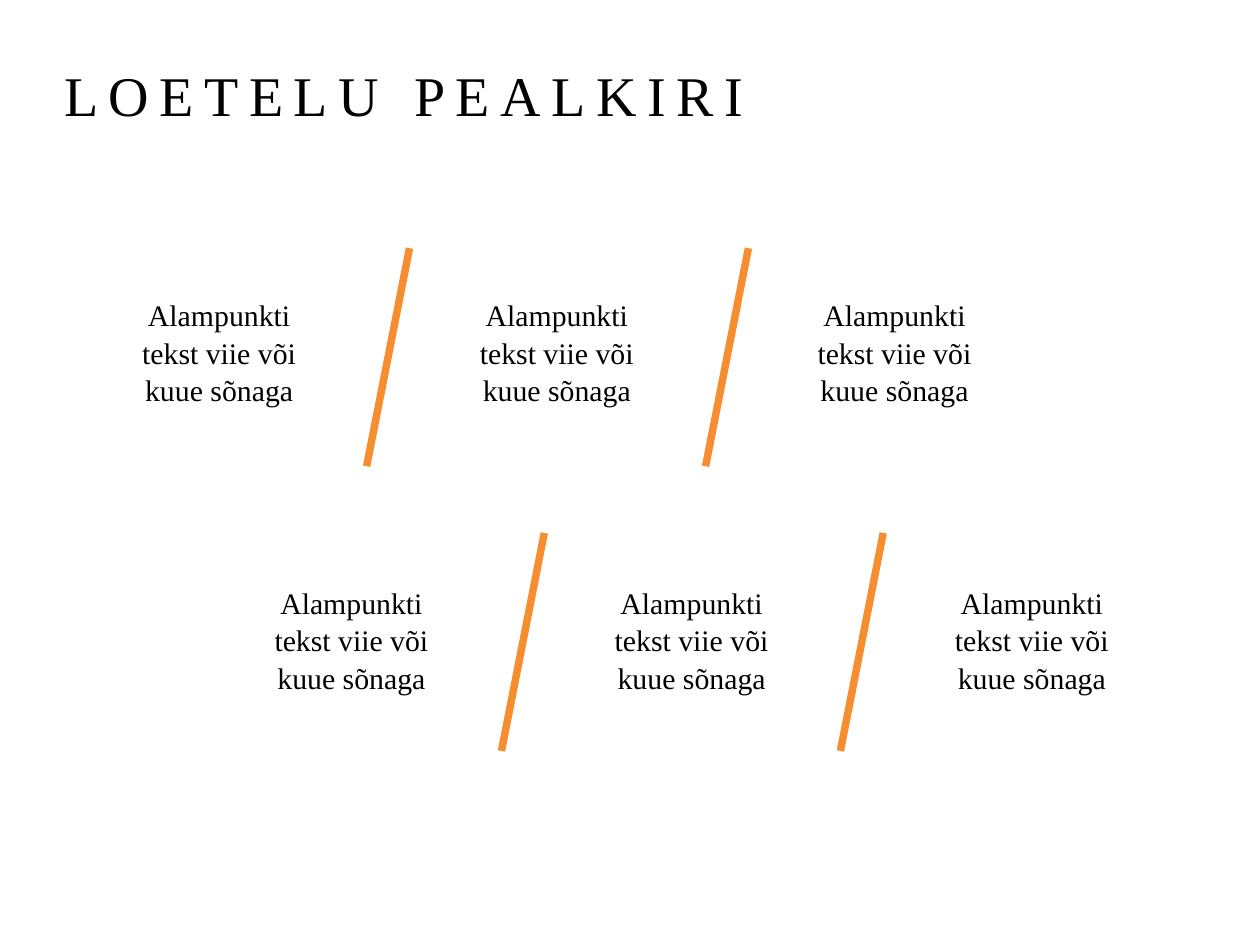
"""Build a title slide with two staggered rows of points parted by slanted lines."""
from dataclasses import dataclass

from lxml import etree
from pptx import Presentation
from pptx.dml.color import RGBColor
from pptx.enum.shapes import MSO_CONNECTOR
from pptx.enum.text import MSO_ANCHOR, MSO_AUTO_SIZE, PP_ALIGN
from pptx.oxml.ns import qn
from pptx.slide import Slide
from pptx.util import Inches, Pt

STRAIGHT = MSO_CONNECTOR.STRAIGHT
MIDDLE, BOTTOM = MSO_ANCHOR.MIDDLE, MSO_ANCHOR.BOTTOM
LEFT, CENTER = PP_ALIGN.LEFT, PP_ALIGN.CENTER
GROW = MSO_AUTO_SIZE.SHAPE_TO_FIT_TEXT
NO_FIT = MSO_AUTO_SIZE.NONE

BLACK = RGBColor(0x00, 0x00, 0x00)
ORANGE = RGBColor(0xF6, 0x8D, 0x2E)
FONT = "Times New Roman"

POINT = ("Alampunkti", "tekst viie või", "kuue sõnaga")
COLUMNS = 3
POINT_W, POINT_H = 1.64, 0.96
SLASH_W, SLASH_H, SLASH_PITCH = 0.34, 1.73, 2.69


@dataclass(frozen=True)
class Row:
    """A row of points, with the slashes between its columns."""
    left: float
    top: float
    pitch: float
    slash_left: float
    slash_top: float


ROWS = (
    Row(left=0.92, top=2.31, pitch=2.68, slash_left=2.91, slash_top=1.97),
    Row(left=1.97, top=4.59, pitch=2.7, slash_left=3.98, slash_top=4.23),
)


def add_text(s: Slide, lines: tuple[str, ...], x: float, y: float, w: float, h: float, *,
             size: float, align: PP_ALIGN = LEFT, anchor: MSO_ANCHOR = MIDDLE,
             fit: MSO_AUTO_SIZE = NO_FIT, line_spacing: float = 1.0,
             tracking: float = 0) -> None:
    """Add a text box with one paragraph for each line."""
    tf = s.shapes.add_textbox(Inches(x), Inches(y), Inches(w), Inches(h)).text_frame
    tf.word_wrap = True
    tf.auto_size = fit
    tf.vertical_anchor = anchor
    for i, line in enumerate(lines):
        p = tf.add_paragraph() if i else tf.paragraphs[0]
        p.alignment = align
        p.line_spacing = line_spacing
        r = p.add_run()
        r.text = line
        r.font.name = FONT
        r.font.size = Pt(size)
        r.font.color.rgb = BLACK
        if tracking:
            r.font._element.set("spc", str(round(tracking * 100)))


def add_slash(s: Slide, x: float, y: float) -> None:
    """Add a slanted line that falls from upper right to lower left."""
    sp = s.shapes.add_connector(STRAIGHT, Inches(x + SLASH_W), Inches(y),
                                Inches(x), Inches(y + SLASH_H))
    sp.line.color.rgb = ORANGE
    sp.line.width = Pt(4.25)
    etree.SubElement(sp._element.spPr, qn("a:effectLst"))


def add_row(s: Slide, row: Row) -> None:
    """Draw the slashes and points of one row."""
    for col in range(COLUMNS - 1):
        add_slash(s, row.slash_left + col * SLASH_PITCH, row.slash_top)
    for col in range(COLUMNS):
        add_text(s, POINT, row.left + col * row.pitch, row.top, POINT_W, POINT_H,
                 size=17, align=CENTER, fit=GROW, line_spacing=1.05)


def main() -> None:
    """Build and save the slide."""
    prs = Presentation()
    prs.slide_width, prs.slide_height = Inches(10), Inches(7.5)
    s = prs.slides.add_slide(prs.slide_layouts[6])
    for row in ROWS:
        add_row(s, row)
    add_text(s, ("LOETELU PEALKIRI",), 0.41, -0.18, 9.15, 1.24,
             size=32, anchor=BOTTOM, tracking=6)
    prs.save("out.pptx")


if __name__ == "__main__":
    main()
